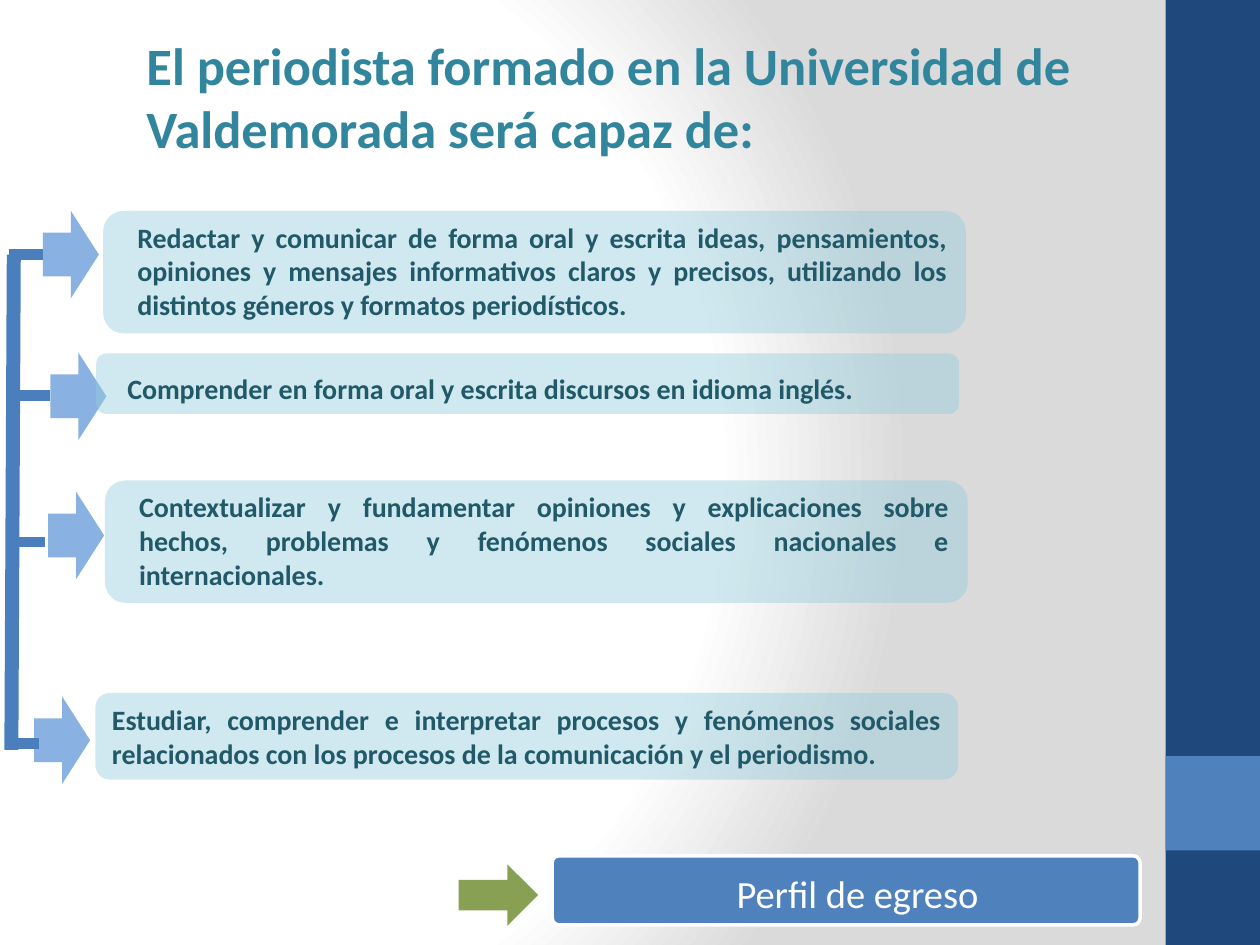
import dataclasses

import lxml.etree
import pptx
import pptx.dml.color
import pptx.enum.shapes
import pptx.enum.text
import pptx.oxml
import pptx.oxml.ns
import pptx.util

Pt = pptx.util.Pt
SHAPE = pptx.enum.shapes.MSO_SHAPE
ALIGN = pptx.enum.text.PP_ALIGN
ANCHOR = pptx.enum.text.MSO_ANCHOR
qn = pptx.oxml.ns.qn
rgb = pptx.dml.color.RGBColor.from_string


@dataclasses.dataclass
class Theme:
    font: str = "Calibri"
    navy: str = "1F497D"
    blue: str = "4F81BD"
    white: str = "FFFFFF"
    gray: str = "DADADA"
    green: str = "77933C"
    arrow: str = "558ED5"
    line: str = "4B7EBC"
    card: str = "93CDDD"
    card_text: str = "215968"
    title: str = "31859C"
    title_size: int = 30
    card_size: int = 16
    label_size: int = 22


theme = Theme()
deck = pptx.Presentation()
deck.slide_width, deck.slide_height = Pt(720), Pt(540)
page = deck.slides.add_slide(deck.slide_layouts[5])


def add_block(kind, left, top, width, height, color, opacity=100):
    """Add a borderless filled shape; opacity is a percentage."""
    block = page.shapes.add_shape(kind, Pt(left), Pt(top), Pt(width), Pt(height))
    block.shadow.inherit = False
    block.line.fill.background()
    block.fill.solid()
    block.fill.fore_color.rgb = rgb(color)
    if opacity < 100:
        srgb = block.fill._xPr.find(".//" + qn("a:srgbClr"))
        lxml.etree.SubElement(srgb, qn("a:alpha"), val=str(opacity * 1000))
    return block


def write(box, text, size, color, bold, align, anchor):
    frame = box.text_frame
    frame.word_wrap = True
    frame.vertical_anchor = anchor
    frame.text = text
    para = frame.paragraphs[0]
    para.alignment = align
    para.font.name = theme.font
    para.font.size = Pt(size)
    para.font.bold = bold
    para.font.color.rgb = rgb(color)
    return para


# Background: white fading to gray on the right
stops = "".join(
    f'<a:gs pos="{position * 1000}"><a:srgbClr val="{color}"/></a:gs>'
    for position, color in [(0, theme.white), (75, theme.white), (100, theme.gray)]
)
background = pptx.oxml.parse_xml(
    f'<p:bg {pptx.oxml.ns.nsdecls("p", "a")}><p:bgPr><a:gradFill rotWithShape="1">'
    f'<a:gsLst>{stops}</a:gsLst><a:path path="circle">'
    '<a:fillToRect l="20000" t="50000" r="100000" b="50000"/></a:path>'
    "</a:gradFill><a:effectLst/></p:bgPr></p:bg>"
)
page._element.cSld.insert(0, background)

# Side band
add_block(SHAPE.RECTANGLE, 666, 0, 54, 540, theme.navy)
add_block(SHAPE.RECTANGLE, 666, 432, 54, 54, theme.blue)

# Section label
plate = add_block(SHAPE.ROUNDED_RECTANGLE, 315.5, 489, 336, 39.5, theme.blue)
plate.adjustments[0] = 0.1
plate.line.color.rgb = rgb(theme.white)
plate.line.width = Pt(2)
label = page.shapes.add_textbox(Pt(323), Pt(493), Pt(334), Pt(37.5))
para = write(label, "Perfil de egreso", theme.label_size, theme.white, False,
             ALIGN.CENTER, ANCHOR.MIDDLE)
para.line_spacing = 0.9
add_block(SHAPE.RIGHT_ARROW, 262, 494, 45.5, 35, theme.green, 88)

# Title
title = page.shapes.title
title.left, title.top, title.width, title.height = Pt(76.5), Pt(15), Pt(544), Pt(101.5)
write(title, "El periodista formado en la Universidad de Valdemorada será capaz de:",
      theme.title_size, theme.title, True, ALIGN.LEFT, ANCHOR.TOP)

# Arrows into each skill
for left, top in [(24.5, 120.5), (28.8, 201.5), (27.5, 281), (19.5, 398)]:
    add_block(SHAPE.RIGHT_ARROW, left, top, 32, 50, theme.arrow, 69)

# Spine and its branches: start, end, width
lines = [
    ((7.9, 145.5), (6.5, 428.5), 8),
    ((5, 145.5), (24.5, 145.5), 6),
    ((9.4, 226), (28.8, 226), 6),
    ((6.5, 309.6), (26, 309.6), 6),
    ((6.5, 424.8), (22.3, 424.8), 6),
]
for start, end, width in lines:
    line = page.shapes.add_connector(
        pptx.enum.shapes.MSO_CONNECTOR.STRAIGHT, *map(Pt, start + end))
    line.line.color.rgb = rgb(theme.line)
    line.line.width = Pt(width)
    lxml.etree.SubElement(line._element.spPr, qn("a:effectLst"))

# Skills: left, top, height, indent, anchor, text
skills = [
    (59, 120.5, 70, 9, ANCHOR.BOTTOM,
     "Redactar y comunicar de forma oral y escrita ideas, pensamientos, opiniones y "
     "mensajes informativos claros y precisos, utilizando los distintos géneros y "
     "formatos periodísticos."),
    (55, 202, 34.5, 9, ANCHOR.BOTTOM,
     "Comprender en forma oral y escrita discursos en idioma inglés."),
    (60, 274.5, 70, 9, ANCHOR.BOTTOM,
     "Contextualizar y fundamentar opiniones y explicaciones sobre hechos, problemas "
     "y fenómenos sociales nacionales e internacionales."),
    (54.5, 396, 49.5, 0, ANCHOR.MIDDLE,
     "Estudiar, comprender e interpretar procesos y fenómenos sociales relacionados "
     "con los procesos de la comunicación y el periodismo."),
]
for left, top, height, indent, anchor, text in skills:
    card = add_block(SHAPE.ROUNDED_RECTANGLE, left, top, 493, height, theme.card, 43)
    para = write(card, text, theme.card_size, theme.card_text, True, ALIGN.JUSTIFY, anchor)
    para._p.get_or_add_pPr().set("marL", str(Pt(indent)))

deck.save("out.pptx")
